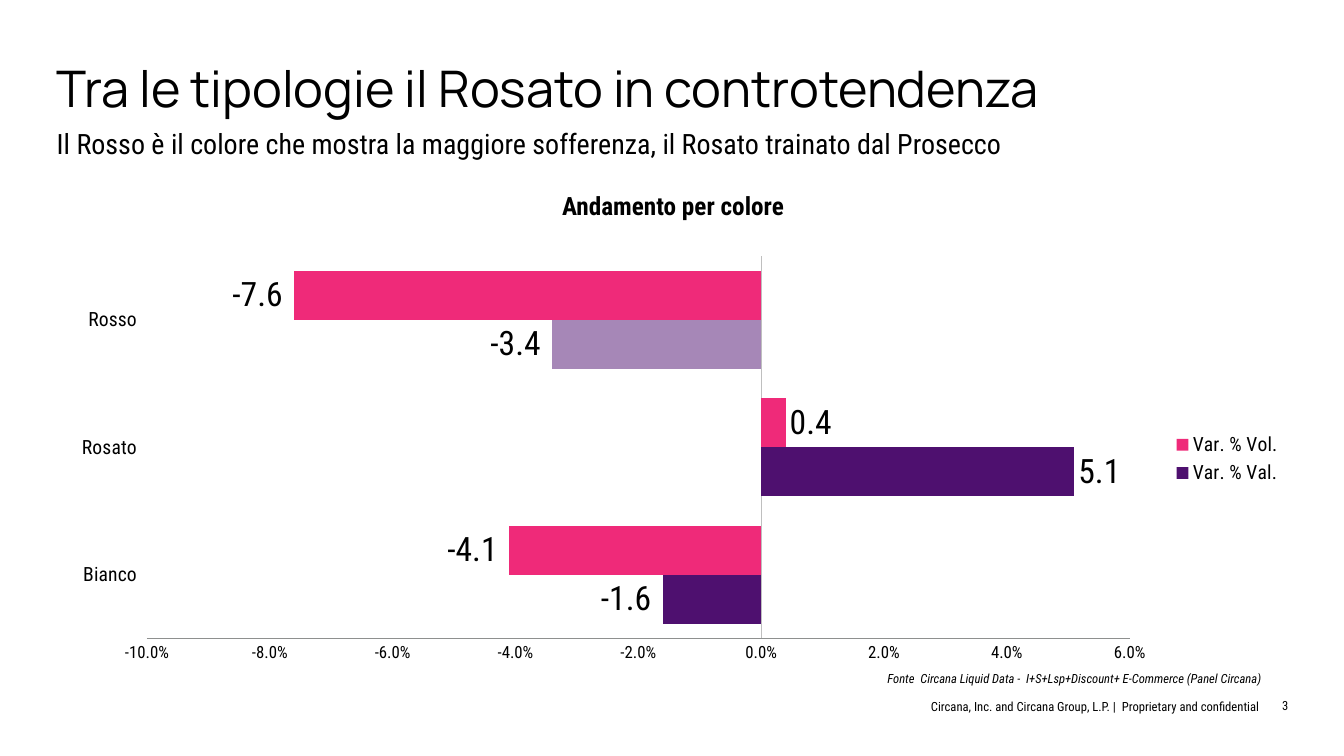
"""Build the slide on wine trends by colour, with its bar chart."""
from dataclasses import dataclass, field
from typing import Any

from lxml.etree import SubElement
from pptx import Presentation
from pptx.chart.chart import Chart
from pptx.chart.data import CategoryChartData
from pptx.chart.series import BarSeries
from pptx.dml.color import RGBColor
from pptx.dml.fill import FillFormat
from pptx.dml.line import LineFormat
from pptx.enum.chart import (XL_CHART_TYPE, XL_LABEL_POSITION,
                             XL_LEGEND_POSITION, XL_TICK_LABEL_POSITION,
                             XL_TICK_MARK)
from pptx.enum.text import MSO_ANCHOR, PP_ALIGN
from pptx.oxml.ns import qn
from pptx.slide import Slide
from pptx.text.text import Font
from pptx.util import Emu, Pt

SCALE = 9525
HEAD, BODY = "Manrope", "Roboto Condensed"
HUES = {"ink": "000000", "plum": "4E106F", "pink": "EF2A79",
        "lilac": "A687B7", "pale": "BFBFBF", "grey": "8E908F"}


@dataclass(frozen=True)
class Box:
    x: int
    y: int
    w: int
    h: int

    def emu(self) -> tuple[Emu, ...]:
        return tuple(Emu(n * SCALE) for n in (self.x, self.y, self.w, self.h))


@dataclass(frozen=True)
class Label:
    box: Box
    text: str
    size: int
    font: dict[str, Any] = field(default_factory=dict)
    para: dict[str, Any] = field(default_factory=dict)
    low: bool = False


@dataclass(frozen=True)
class Bars:
    name: str
    hue: str
    vals: tuple[float, ...]
    tints: dict[int, str] = field(default_factory=dict)


TIGHT = {"line_spacing": 0.9}
RIGHT = {"alignment": PP_ALIGN.RIGHT}
LABELS = (
    Label(Box(54, 61, 1174, 58), "Tra le tipologie il Rosato in controtendenza",
          36, {"name": HEAD}, TIGHT),
    Label(Box(54, 124, 1174, 48),
          "Il Rosso è il colore che mostra la maggiore sofferenza, "
          "il Rosato trainato dal Prosecco", 20, para=TIGHT),
    Label(Box(54, 181, 1174, 29), "Andamento per colore", 18, {"bold": True},
          {"alignment": PP_ALIGN.CENTER}),
    Label(Box(648, 637, 553, 17),
          "Fonte  Circana Liquid Data -  I+S+Lsp+Discount+ E-Commerce "
          "(Panel Circana)", 9, {"italic": True}, TIGHT | RIGHT, True),
    Label(Box(796, 661, 403, 19),
          "Circana, Inc. and Circana Group, L.P. |  Proprietary and confidential",
          9, para=TIGHT | RIGHT, low=True),
    Label(Box(1212, 662, 15, 17), "3", 9, para=RIGHT, low=True),
)

FRAME = Box(54, 236, 1177, 402)
PLOT = Box(140, 244, 936, 364)
KINDS = ("Bianco", "Rosato", "Rosso")
BARS = (
    Bars("Var. % Val.", "plum", (-1.6, 5.1, -3.4), {2: "lilac"}),
    Bars("Var. % Vol.", "pink", (-4.1, 0.4, -7.6)),
)


def apply(item: Any, form: dict[str, Any]) -> None:
    for key, val in form.items():
        setattr(item, key, val)


def style(font: Font, size: int, form: dict[str, Any] | None = None) -> None:
    apply(font, {"name": BODY, "size": Pt(size)} | (form or {}))
    font.color.rgb = RGBColor.from_string(HUES["ink"])


def paint(fill: FillFormat, hue: str) -> None:
    fill.solid()
    fill.fore_color.rgb = RGBColor.from_string(HUES[hue])


def rule(line: LineFormat, hue: str) -> None:
    line.width = Pt(0.75)
    paint(line.fill, hue)


def write(slide: Slide, label: Label) -> None:
    frame = slide.shapes.add_textbox(*label.box.emu()).text_frame
    apply(frame, {
        "word_wrap": True,
        "vertical_anchor": MSO_ANCHOR.BOTTOM if label.low else MSO_ANCHOR.TOP,
        "margin_left": 0, "margin_right": 0,
        "margin_top": 0, "margin_bottom": 0})
    para = frame.paragraphs[0]
    apply(para, label.para)
    run = para.add_run()
    run.text = label.text
    style(run.font, label.size, label.font)


def place(chart: Chart) -> None:
    area = chart.plots[0]._element.getparent()
    for old in area.findall(qn("c:layout")):
        area.remove(old)
    layout = SubElement(area, qn("c:layout"))
    area.insert(0, layout)
    manual = SubElement(layout, qn("c:manualLayout"))
    parts = {"layoutTarget": "inner", "xMode": "edge", "yMode": "edge",
             "x": (PLOT.x - FRAME.x) / FRAME.w,
             "y": (PLOT.y - FRAME.y) / FRAME.h,
             "w": PLOT.w / FRAME.w, "h": PLOT.h / FRAME.h}
    for tag, val in parts.items():
        SubElement(manual, qn(f"c:{tag}")).set("val", str(val))


def tint(series: BarSeries, bars: Bars) -> None:
    series.invert_if_negative = False
    paint(series.format.fill, bars.hue)
    for spot, hue in bars.tints.items():
        paint(series.points[spot].format.fill, hue)
    apply(series.data_labels, {
        "show_value": True, "position": XL_LABEL_POSITION.OUTSIDE_END,
        "number_format": r"#,##0.0_ ;\-#,##0.0\ ",
        "number_format_is_linked": False})
    style(series.data_labels.font, 24)


def draw(slide: Slide) -> None:
    data = CategoryChartData()
    data.categories = KINDS
    for bars in BARS:
        data.add_series(bars.name, bars.vals)
    chart = slide.shapes.add_chart(
        XL_CHART_TYPE.BAR_CLUSTERED, *FRAME.emu(), data).chart
    apply(chart, {"has_title": False, "has_legend": True})
    style(chart.font, 10)
    apply(chart.legend, {"position": XL_LEGEND_POSITION.RIGHT,
                         "include_in_layout": False})
    style(chart.legend.font, 14)
    plot = chart.plots[0]
    apply(plot, {"gap_width": 60, "overlap": 0, "vary_by_categories": False})
    for series, bars in zip(plot.series, BARS):
        tint(series, bars)
    for axis, size, hue in ((chart.category_axis, 14, "pale"),
                            (chart.value_axis, 12, "grey")):
        apply(axis, {"has_major_gridlines": False,
                     "major_tick_mark": XL_TICK_MARK.NONE,
                     "minor_tick_mark": XL_TICK_MARK.NONE})
        style(axis.tick_labels.font, size)
        rule(axis.format.line, hue)
    chart.category_axis.tick_label_position = XL_TICK_LABEL_POSITION.LOW
    apply(chart.value_axis, {"minimum_scale": -10, "maximum_scale": 6,
                             "major_unit": 2})
    apply(chart.value_axis.tick_labels, {"number_format": '#,##0.0"%"',
                                         "number_format_is_linked": False})
    place(chart)


def main() -> None:
    deck = Presentation()
    apply(deck, {"slide_width": Emu(1280 * SCALE),
                 "slide_height": Emu(720 * SCALE)})
    slide = deck.slides.add_slide(deck.slide_layouts[6])
    draw(slide)
    for label in LABELS:
        write(slide, label)
    deck.save("out.pptx")


if __name__ == "__main__":
    main()
